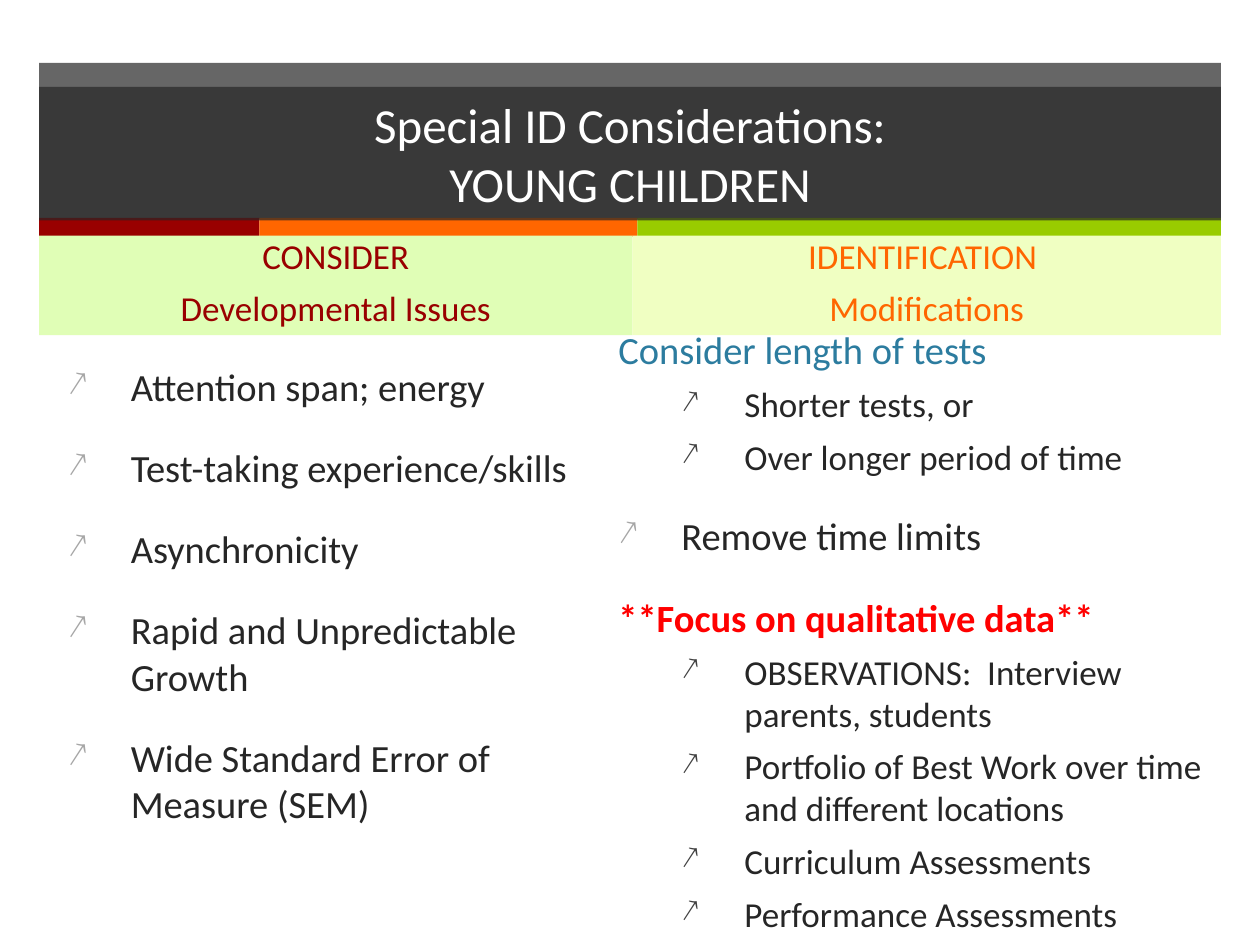
from lxml.etree import SubElement
from pptx import Presentation
from pptx.dml.color import RGBColor
from pptx.enum.shapes import MSO_SHAPE as Shape
from pptx.enum.text import MSO_ANCHOR as Anchor, PP_ALIGN as Align
from pptx.oxml.ns import qn
from pptx.util import Inches, Pt

WHITE = RGBColor(0xFF, 0xFF, 0xFF)
INK = RGBColor(0x26, 0x26, 0x26)
MAROON = RGBColor(0x99, 0x00, 0x00)
ORANGE = RGBColor(0xFF, 0x66, 0x00)
GREEN = RGBColor(0x99, 0xCC, 0x00)
MINT = RGBColor(0xE0, 0xFE, 0xB6)
LEMON = RGBColor(0xF0, 0xFF, 0xC2)
BLUE = RGBColor(0x2C, 0x7C, 0x9F)
RED = RGBColor(0xFF, 0x00, 0x00)
SILVER = RGBColor(0xA6, 0xA6, 0xA6)
GRAY = RGBColor(0x40, 0x40, 0x40)

deck = Presentation()
deck.slide_width, deck.slide_height = Inches(10), Inches(7.5)
slide = deck.slides.add_slide(deck.slide_layouts[6])


def add_bar(left, top, width, height, color, alpha=100):
    bar = slide.shapes.add_shape(
        Shape.RECTANGLE, Inches(left), Inches(top), Inches(width), Inches(height))
    bar.shadow.inherit = False
    bar.fill.solid()
    bar.fill.fore_color.rgb = color
    bar.line.fill.background()
    if alpha < 100:
        tint = bar.fill._xPr.find(qn("a:solidFill"))[0]
        SubElement(tint, qn("a:alpha"), val=str(alpha * 1000))
    return bar


def add_run(para, text, size, color, bold=False):
    run = para.add_run()
    run.text = text
    run.font.name = "Calibri"
    run.font.size = Pt(size)
    run.font.bold = bold
    run.font.color.rgb = color


add_bar(0.31, 0.5, 9.38, 1.24, INK, 70)
for left, width, color in [(0.31, 1.75, MAROON), (2.06, 3, ORANGE), (5.06, 4.63, GREEN)]:
    add_bar(left, 1.73, width, 0.15, color)

title = add_bar(0.31, 0.69, 9.38, 1.06, INK, 70).text_frame
title.vertical_anchor = Anchor.MIDDLE
para = title.paragraphs[0]
para.alignment = Align.CENTER
add_run(para, "Special ID Considerations:", 28, WHITE)
para.add_line_break()
add_run(para, "YOUNG CHILDREN", 28, WHITE)

issues = [
    ("item", "Attention span; energy"),
    ("item", "Test-taking experience/skills"),
    ("item", "Asynchronicity"),
    ("item", "Rapid and Unpredictable Growth"),
    ("item", "Wide Standard Error of Measure (SEM)"),
]
changes = [
    ("head", "Consider length of tests"),
    ("sub", "Shorter tests, or"),
    ("sub", "Over longer period of time"),
    ("item", "Remove time limits"),
    ("focus", "**Focus on qualitative data**"),
    ("sub", "OBSERVATIONS:  Interview parents, students"),
    ("sub", "Portfolio of Best Work over time and different locations"),
    ("sub", "Curriculum Assessments"),
    ("sub", "Performance Assessments"),
]
styles = {
    "head": (0, 22, 20, BLUE, None),
    "focus": (0, 22, 20, RED, None),
    "item": (0, 22, 20, INK, SILVER),
    "sub": (1, 20, 6, INK, GRAY),
}

for left, top, width, height, rows in [
    (0.44, 2.83, 4.3, 4.27, issues),
    (4.81, 2.54, 4.88, 4.7, changes),
]:
    box = slide.shapes.add_textbox(Inches(left), Inches(top), Inches(width), Inches(height))
    frame = box.text_frame
    frame.word_wrap = True
    for i, (kind, text) in enumerate(rows):
        level, size, gap, color, mark = styles[kind]
        para = frame.add_paragraph() if i else frame.paragraphs[0]
        para.level = level
        para.space_before = Pt(gap)
        add_run(para, text, size, color, kind == "focus")
        if mark:
            props = para._p.get_or_add_pPr()
            props.set("marL", str(Inches(0.5 + 0.5 * level)))
            props.set("indent", str(Inches(-0.5)))
            tint = SubElement(props, qn("a:buClr"))
            SubElement(tint, qn("a:srgbClr"), val=str(mark))
            SubElement(props, qn("a:buSzPct"), val="90000")
            SubElement(props, qn("a:buChar"), char="↗")

for left, width, fill, color, lines in [
    (0.31, 4.71, MINT, MAROON, ["CONSIDER", "Developmental Issues"]),
    (5.02, 4.67, LEMON, ORANGE, ["IDENTIFICATION ", "Modifications"]),
]:
    frame = add_bar(left, 1.87, width, 0.79, fill).text_frame
    frame.vertical_anchor = Anchor.BOTTOM
    for i, text in enumerate(lines):
        para = frame.add_paragraph() if i else frame.paragraphs[0]
        para.alignment = Align.CENTER
        para.space_before = Pt(6)
        add_run(para, text, 20, color)

deck.save("out.pptx")
